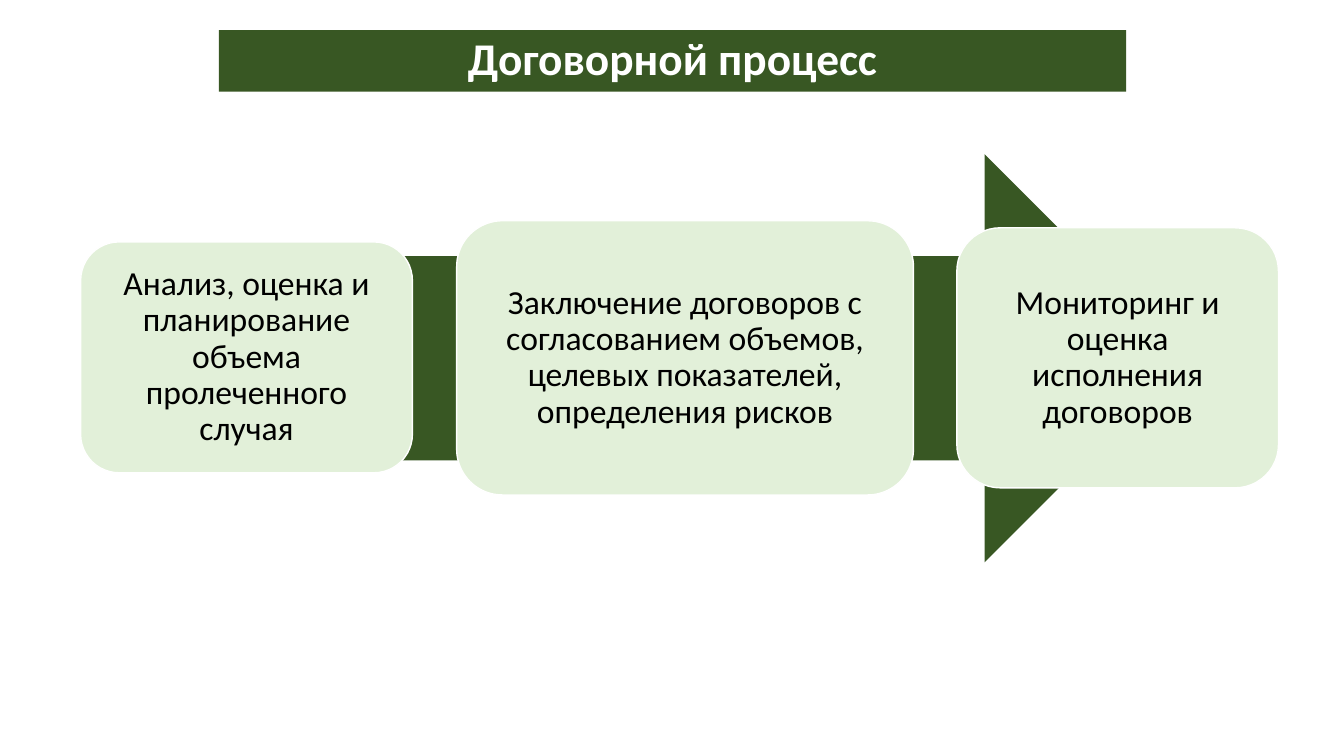
from pptx import Presentation
from pptx.dml.color import RGBColor
from pptx.enum.shapes import MSO_SHAPE
from pptx.enum.text import MSO_ANCHOR, PP_ALIGN
from pptx.util import Emu, Pt

EMU_PER_PX = 9144  # 100 px to the inch
DARK_GREEN, PALE_GREEN = "385723", "E2F0D9"
WHITE, BLACK = "FFFFFF", "000000"

# Left, top, width, height and wording of each stage
STAGES = [
    (80, 240, 329, 229, "Анализ, оценка и планирование объема пролеченного случая"),
    (453, 219, 453, 272, "Заключение договоров с согласованием объемов, "
                         "целевых показателей, определения рисков"),
    (949, 226, 319, 258, "Мониторинг и оценка исполнения договоров"),
]


def px(length):
    return Emu(length * EMU_PER_PX)


def colour(hex_code):
    return RGBColor.from_string(hex_code)


def add_block(slide, preset, left, top, width, height, fill, outline=None):
    block = slide.shapes.add_shape(preset, px(left), px(top), px(width), px(height))
    block.shadow.inherit = False
    block.fill.solid()
    block.fill.fore_color.rgb = colour(fill)
    if outline:
        block.line.color.rgb = colour(outline)
        block.line.width = Pt(1)
    else:
        block.line.fill.background()
    return block


def write(block, text, size, ink, bold=False, inset=10):
    frame = block.text_frame
    frame.word_wrap = True
    frame.vertical_anchor = MSO_ANCHOR.MIDDLE
    frame.margin_left = frame.margin_right = px(inset)
    frame.margin_top = frame.margin_bottom = px(inset)
    paragraph = frame.paragraphs[0]
    paragraph.alignment = PP_ALIGN.CENTER
    paragraph.line_spacing = 0.9
    run = paragraph.add_run()
    run.text = text
    run.font.name = "Calibri"
    run.font.size = Pt(size)
    run.font.bold = bold
    run.font.color.rgb = colour(ink)


def add_stage(slide, left, top, width, height, text):
    stage = add_block(slide, MSO_SHAPE.ROUNDED_RECTANGLE, left, top, width, height,
                      PALE_GREEN, outline=WHITE)
    write(stage, text, size=24, ink=BLACK)


def main():
    deck = Presentation()
    deck.slide_width, deck.slide_height = px(1333), px(750)
    slide = deck.slides.add_slide(deck.slide_layouts[6])

    # Heading band
    heading = add_block(slide, MSO_SHAPE.RECTANGLE, 217, 30, 900, 61, DARK_GREEN)
    write(heading, "Договорной процесс", size=32.4, ink=WHITE, bold=True, inset=5)

    # Process arrow with its stages on top
    add_block(slide, MSO_SHAPE.RIGHT_ARROW, 169, 153, 1010, 405, DARK_GREEN)
    for stage in STAGES:
        add_stage(slide, *stage)

    deck.save("out.pptx")


if __name__ == "__main__":
    main()
